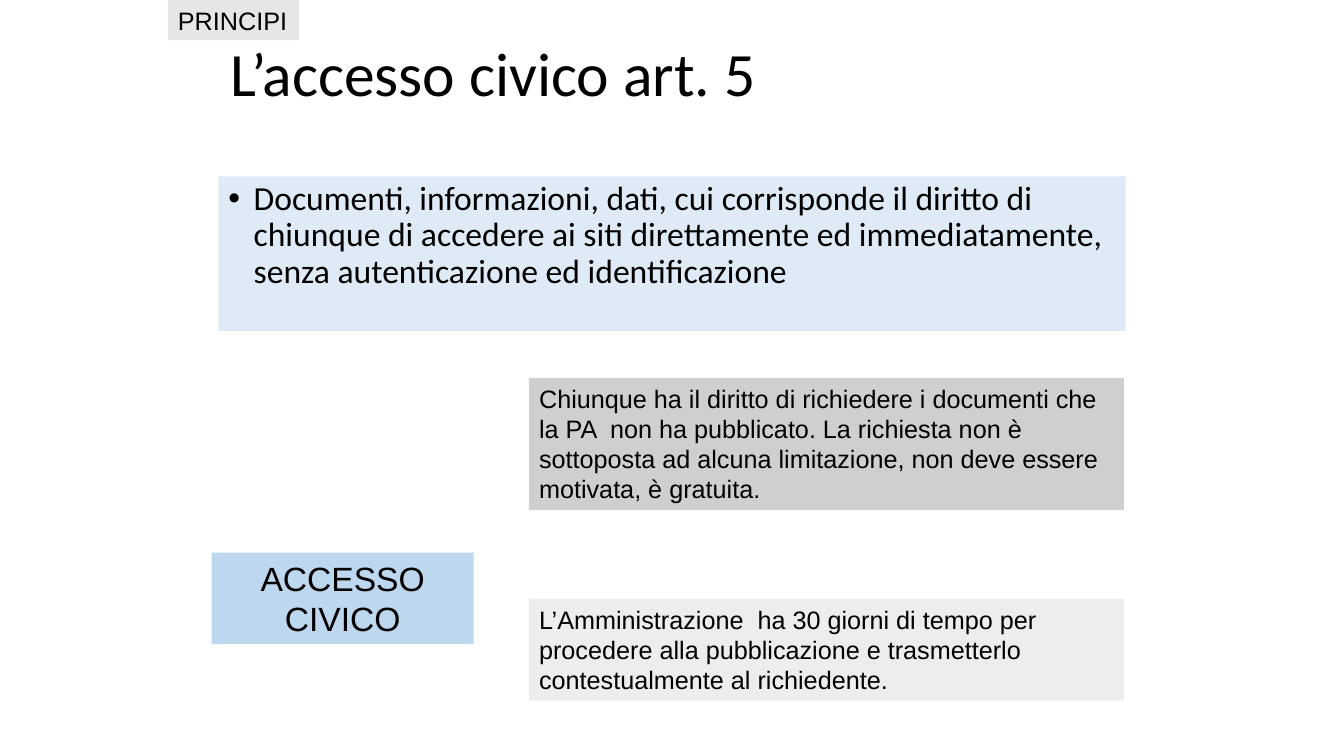
import pptx
import pptx.dml.color
import pptx.enum.text
import pptx.util

COLOURS = {
    "ink": "000000",
    "principle": "DEEBF7",
    "access": "BDD7EE",
    "request": "D0CECE",
    "deadline": "EDEDED",
    "tag": "E7E6E6",
}
COLUMNS, ROWS = 160, 90  # square cells, twelve to the inch
ALIGN = pptx.enum.text.PP_ALIGN
ANCHOR = pptx.enum.text.MSO_ANCHOR
FIT = pptx.enum.text.MSO_AUTO_SIZE


class CivicSlide:
    """Holds the style and the current slide."""

    def __init__(self, deck):
        self.cell_width = deck.slide_width / COLUMNS
        self.cell_height = deck.slide_height / ROWS
        self.slide = deck.slides.add_slide(deck.slide_layouts[1])

    def area(self, column, row, width, height):
        return {
            "left": round(column * self.cell_width),
            "top": round(row * self.cell_height),
            "width": round(width * self.cell_width),
            "height": round(height * self.cell_height),
        }

    def apply(self, target, values):
        for attribute, value in values.items():
            setattr(target, attribute, value)

    def colour(self, name):
        return pptx.dml.color.RGBColor.from_string(COLOURS[name])

    def paint(self, shape, fill):
        shape.fill.solid()
        shape.fill.fore_color.rgb = self.colour(fill)

    def add_wording(self, shape, text, size, font, frame, paragraph):
        self.apply(shape.text_frame, {"word_wrap": True, **frame})
        line = shape.text_frame.paragraphs[0]
        self.apply(line, paragraph)
        run = line.add_run()
        run.text = text
        self.apply(run.font, {"name": font, "size": pptx.util.Pt(size)})
        run.font.color.rgb = self.colour("ink")

    def title(self, text, cells):
        heading = self.slide.shapes.title
        self.apply(heading, self.area(*cells))
        self.add_wording(heading, text, 44, "Calibri",
                         {"auto_size": FIT.NONE, "vertical_anchor": ANCHOR.MIDDLE},
                         {"alignment": ALIGN.LEFT, "line_spacing": 0.9})

    def bullet(self, text, cells, fill):
        body = self.slide.placeholders[1]
        self.apply(body, self.area(*cells))
        self.paint(body, fill)
        self.add_wording(body, text, 24, "Calibri",
                         {"auto_size": FIT.NONE, "vertical_anchor": ANCHOR.TOP},
                         {"line_spacing": 0.9, "space_before": pptx.util.Pt(10)})
        # Hanging indent for the bullet
        indent = pptx.util.Inches(0.25)
        properties = body.text_frame.paragraphs[0]._p.get_or_add_pPr()
        properties.set("marL", str(indent))
        properties.set("indent", str(-indent))

    def panel(self, text, cells, fill, size=18, alignment=ALIGN.LEFT):
        box = self.slide.shapes.add_textbox(**self.area(*cells))
        self.paint(box, fill)
        self.add_wording(box, text, size, "Arial",
                         {"auto_size": FIT.SHAPE_TO_FIT_TEXT},
                         {"alignment": alignment})


def main():
    deck = pptx.Presentation()
    deck.slide_width = pptx.util.Inches(13.33)
    deck.slide_height = pptx.util.Inches(7.5)
    civic = CivicSlide(deck)

    # Title and principle
    civic.title("L’accesso civico art. 5", (26.2, 1.6, 108, 15))
    civic.bullet("Documenti, informazioni, dati, cui corrisponde il diritto di "
                 "chiunque di accedere ai siti direttamente ed immediatamente, "
                 "senza autenticazione ed identificazione",
                 (26, 21, 108, 18.4), "principle")

    # Civic access and its two rules
    civic.panel("ACCESSO CIVICO", (25.2, 65.8, 31.2, 10.9), "access",
                24, ALIGN.CENTER)
    civic.panel("Chiunque ha il diritto di richiedere i documenti che la PA  non "
                "ha pubblicato. La richiesta non è sottoposta ad alcuna "
                "limitazione, non deve essere motivata, è gratuita.",
                (63, 45, 70.8, 15.7), "request")
    civic.panel("L’Amministrazione  ha 30 giorni di tempo per procedere alla "
                "pubblicazione e trasmetterlo contestualmente al richiedente.",
                (63, 71.3, 70.8, 12.1), "deadline")

    # Section tag
    civic.panel("PRINCIPI", (20, 0, 15.6, 4.8), "tag")

    deck.save("out.pptx")


if __name__ == "__main__":
    main()
